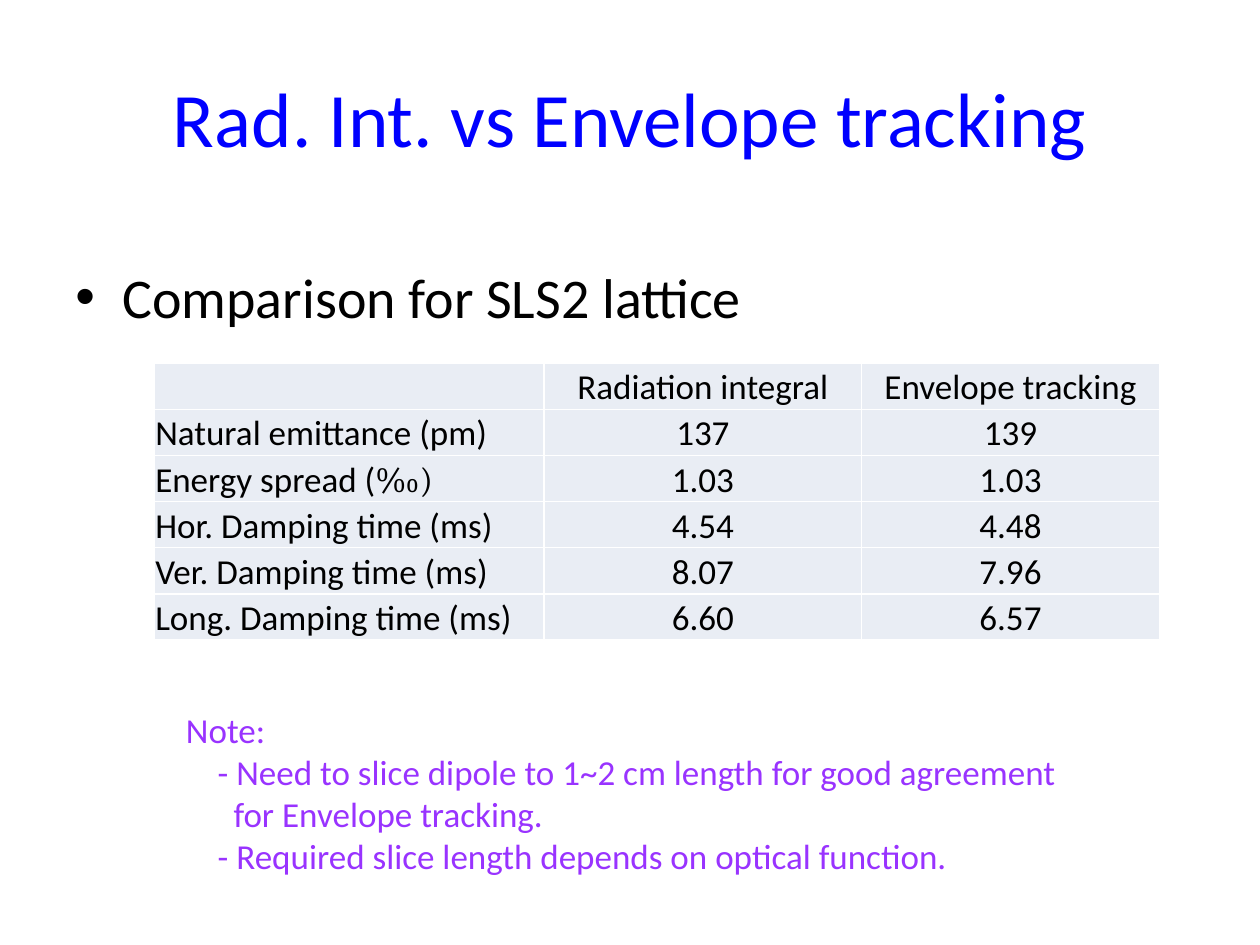
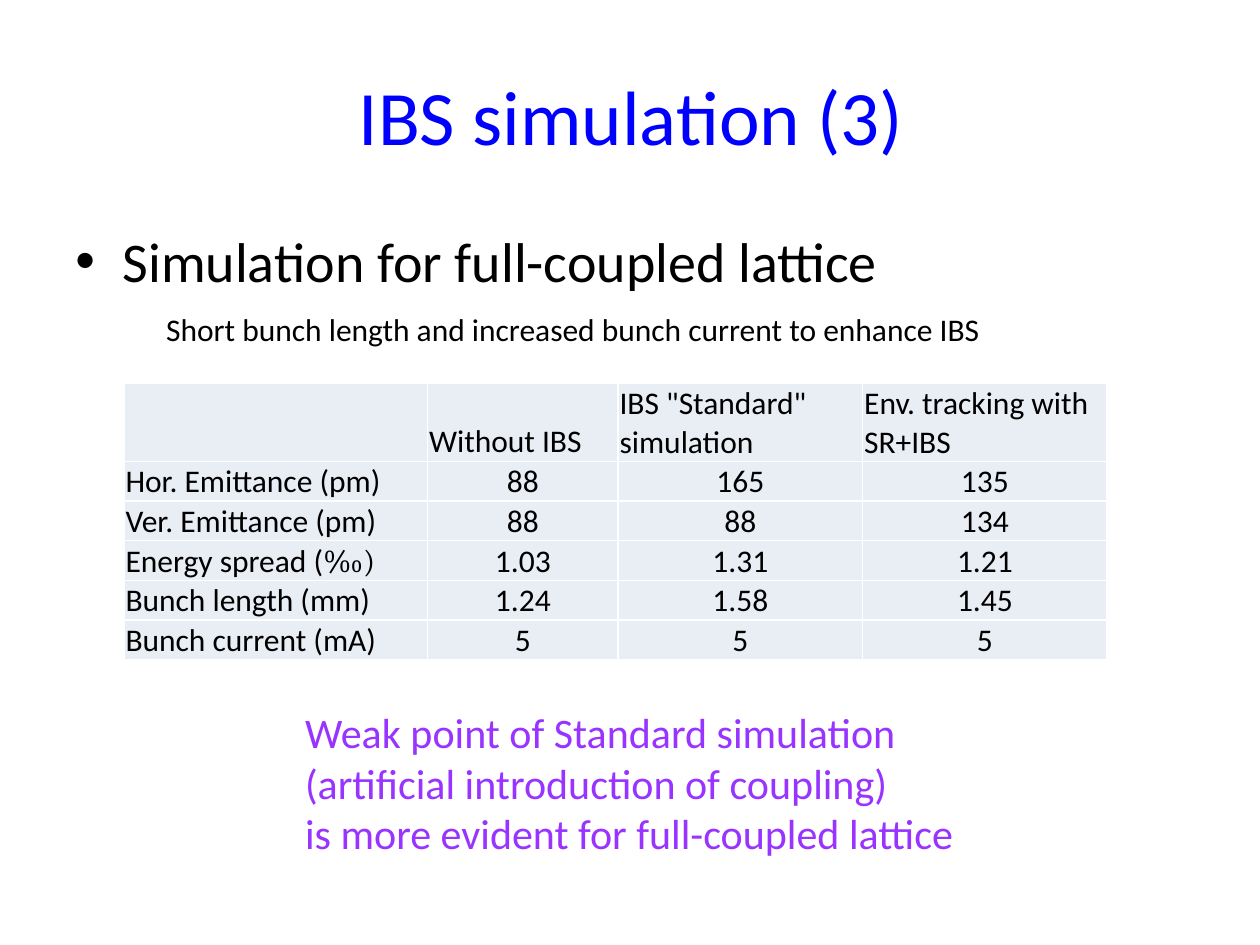
from pptx import Presentation
from pptx.dml.color import RGBColor
from pptx.enum.text import MSO_ANCHOR, PP_ALIGN
from pptx.oxml.ns import qn
from pptx.util import Cm, Pt
from lxml import etree

LEFT, CENTER = PP_ALIGN.LEFT, PP_ALIGN.CENTER
MIDDLE, BOTTOM = MSO_ANCHOR.MIDDLE, MSO_ANCHOR.BOTTOM

BLUE, BLACK, PURPLE = "0000FF", "000000", "9933FF"
CELL_FILL, CELL_BORDER = "E9EDF4", "FFFFFF"
FONT, SYMBOL_FONT = "Calibri", "Cambria"
TITLE_ONLY = 5
PER_MILLE = "‰"


def rgb(hex_color):
    return RGBColor.from_string(hex_color)


def format_run(run, size, color, font=FONT):
    run.font.name = font
    run.font.size = Pt(size)
    run.font.color.rgb = rgb(color)


def add_titled_slide(prs, heading, left, top):
    slide = prs.slides.add_slide(prs.slide_layouts[TITLE_ONLY])
    title = slide.shapes.title
    title.left, title.top, title.width, title.height = Cm(left), Cm(top), Cm(22.86), Cm(3.18)
    frame = title.text_frame
    frame.text = heading
    frame.vertical_anchor = MIDDLE
    frame.paragraphs[0].alignment = CENTER
    format_run(frame.paragraphs[0].runs[0], 44, BLUE)
    return slide


def add_text(slide, box, lines, size, color, indents=()):
    """Add one paragraph per line; indents gives left margins in cm."""
    frame = slide.shapes.add_textbox(*map(Cm, box)).text_frame
    frame.word_wrap = True
    frame.text = "\n".join(lines)
    for paragraph in frame.paragraphs:
        format_run(paragraph.runs[0], size, color)
    for paragraph, indent in zip(frame.paragraphs, indents):
        paragraph._p.get_or_add_pPr().set("marL", str(Cm(indent)))
    return frame


def add_bullet(slide, top, text):
    frame = add_text(slide, (1.27, top, 22.86, 12.57), [text], 32, BLACK, [0.95])
    properties = frame.paragraphs[0]._p.get_or_add_pPr()
    properties.set("indent", str(-Cm(0.95)))
    etree.SubElement(properties, qn("a:buFont")).set("typeface", "Arial")
    etree.SubElement(properties, qn("a:buChar")).set("char", "•")


def add_borders(cell):
    properties = cell._tc.get_or_add_tcPr()
    for side in ("lnL", "lnR", "lnT", "lnB"):
        line = etree.SubElement(properties, qn(f"a:{side}"), w=str(Pt(1)))
        fill = etree.SubElement(line, qn("a:solidFill"))
        etree.SubElement(fill, qn("a:srgbClr"), val=CELL_BORDER)


def fill_cell(cell, text, size, alignment):
    add_borders(cell)
    cell.fill.solid()
    cell.fill.fore_color.rgb = rgb(CELL_FILL)
    cell.vertical_anchor = BOTTOM
    cell.margin_left = cell.margin_right = cell.margin_top = Cm(0.03)
    cell.margin_bottom = 0
    paragraph = cell.text_frame.paragraphs[0]
    paragraph.alignment = alignment
    label, symbol, rest = text.partition(PER_MILLE)
    for part, font in ((label, FONT), (symbol + rest, SYMBOL_FONT)):
        if part:
            run = paragraph.add_run()
            run.text = part
            format_run(run, size, BLACK, font)


def add_results_table(slide, left, top, widths, heights, rows, size, header_alignment):
    frame = slide.shapes.add_table(len(rows), len(widths), Cm(left), Cm(top),
                                   Cm(sum(widths)), Cm(sum(heights)))
    table = frame.table
    table.first_row = table.horz_banding = False
    for column, width in zip(table.columns, widths):
        column.width = Cm(width)
    for r, (height, values) in enumerate(zip(heights, rows)):
        table.rows[r].height = Cm(height)
        for c, value in enumerate(values):
            alignment = header_alignment if r == 0 else CENTER if c else LEFT
            fill_cell(table.cell(r, c), value, size, alignment)


def build_tracking_slide(prs):
    slide = add_titled_slide(prs, "Rad. Int. vs Envelope tracking", 1.27, 0.76)
    add_bullet(slide, 5.16, "Comparison for SLS2 lattice")
    comparison = [
        ("", "Radiation integral", "Envelope tracking"),
        ("Natural emittance (pm)", "137", "139"),
        ("Energy spread (‰)", "1.03", "1.03"),
        ("Hor. Damping time (ms)", "4.54", "4.48"),
        ("Ver. Damping time (ms)", "8.07", "7.96"),
        ("Long. Damping time (ms)", "6.60", "6.57"),
    ]
    add_results_table(slide, 3.1, 7.32, (7.87, 6.4, 6), [0.93] * 6,
                      comparison, 20, CENTER)
    note = [
        "Note:",
        "- Need to slice dipole to 1~2 cm length for good agreement",
        "for Envelope tracking.",
        "- Required slice length depends on optical function.",
    ]
    add_text(slide, (3.5, 14.15, 19.08, 3.68), note, 20, PURPLE, (0, 0.64, 0.96, 0.64))


def build_ibs_slide(prs):
    slide = add_titled_slide(prs, "IBS simulation (3)", 1.3, 0.72)
    add_bullet(slide, 4.45, "Simulation for full-coupled lattice")
    simulation = [
        ("", "Without IBS", 'IBS "Standard" simulation', "Env. tracking with SR+IBS"),
        ("Hor. Emittance (pm)", "88", "165", "135"),
        ("Ver. Emittance (pm)", "88", "88", "134"),
        ("Energy spread (‰)", "1.03", "1.31", "1.21"),
        ("Bunch length (mm)", "1.24", "1.58", "1.45"),
        ("Bunch current (mA)", "5", "5", "5"),
    ]
    add_results_table(slide, 2.5, 7.73, (6.12, 3.84, 4.93, 4.93), [1.57] + [0.8] * 5,
                      simulation, 18, LEFT)
    add_text(slide, (3.1, 6.12, 17.2, 1.03),
             ["Short bunch length and increased bunch current to enhance IBS"], 18, BLACK)
    conclusion = [
        "Weak point of Standard simulation",
        "(artificial introduction of coupling)",
        "is more evident for full-coupled lattice",
    ]
    add_text(slide, (5.9, 14.12, 13.9, 3.33), conclusion, 24, PURPLE)


def main():
    prs = Presentation()
    prs.slide_width, prs.slide_height = Cm(25.4), Cm(19.05)
    build_tracking_slide(prs)
    build_ibs_slide(prs)
    prs.save("out.pptx")


if __name__ == "__main__":
    main()
